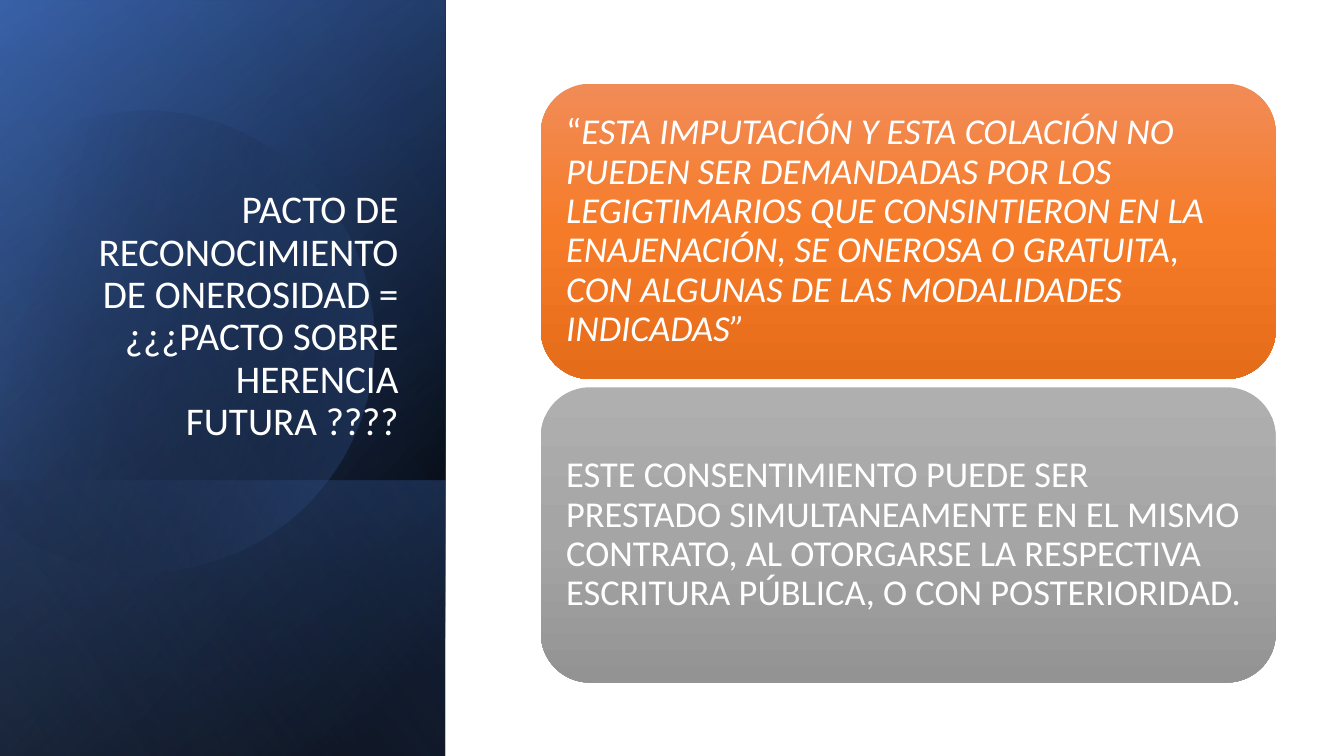
import math
import pptx
import pptx.util
import pptx.dml.color
import pptx.enum.shapes
import pptx.enum.text
import pptx.oxml
import pptx.oxml.ns

Cm = pptx.util.Cm
RGB = pptx.dml.color.RGBColor
KIND = pptx.enum.shapes.MSO_SHAPE
ALIGN = pptx.enum.text.PP_ALIGN
ANCHOR = pptx.enum.text.MSO_ANCHOR
SPACE = pptx.oxml.ns.nsdecls("a")

WHITE = RGB(0xFF, 0xFF, 0xFF)
BLACK = RGB(0x00, 0x00, 0x00)
NAVY = RGB(0x2F, 0x55, 0x97)
BLUE = RGB(0x44, 0x72, 0xC4)
PALE = RGB(0x8F, 0xAA, 0xDC)
ORANGE = [RGB(0xF1, 0x8C, 0x57), RGB(0xF6, 0x7B, 0x28), RGB(0xE5, 0x6C, 0x19)]
GRAY = [RGB(0xAF, 0xAF, 0xAF), RGB(0xA5, 0xA5, 0xA5), RGB(0x93, 0x93, 0x93)]


def paint(shape, stops, angle):
    """Fill with (position, colour, opacity) stops, all but the angle in percent."""
    marks = "".join(
        f'<a:gs pos="{pos * 1000}"><a:srgbClr val="{color}">'
        f'<a:alpha val="{alpha * 1000}"/></a:srgbClr></a:gs>'
        for pos, color, alpha in stops)
    fill = pptx.oxml.parse_xml(
        f'<a:gradFill {SPACE} rotWithShape="1"><a:gsLst>{marks}</a:gsLst>'
        f'<a:lin ang="{angle * 60000}" scaled="0"/></a:gradFill>')
    shape._element.spPr.insert(2, fill)
    shape.line.fill.background()
    shape.shadow.inherit = False


def write(shape, runs, size, align, anchor, side, edge):
    """Set the text from (words, italic) runs."""
    frame = shape.text_frame
    frame.word_wrap = True
    frame.auto_size = pptx.enum.text.MSO_AUTO_SIZE.NONE
    frame.vertical_anchor = anchor
    frame.margin_left = frame.margin_right = side
    frame.margin_top = frame.margin_bottom = edge
    para = frame.paragraphs[0]
    para.alignment = align
    para.line_spacing = 0.9
    for words, slant in runs:
        run = para.add_run()
        run.text = words
        run.font.name = "Calibri"
        run.font.size = pptx.util.Pt(size)
        run.font.italic = slant
        run.font.color.rgb = WHITE


deck = pptx.Presentation()
deck.slide_width, deck.slide_height = Cm(33.87), Cm(19.05)
slide = deck.slides.add_slide(deck.slide_layouts[5])
shapes = slide.shapes

# Side panel: turned rectangles, with the disc below the last one
full = (-3.92, 3.92, 19.05, 11.23)
foot = (2.13, 9.97, 6.96, 11.23)
panels = [
    (full, [(8, BLACK, 100), (100, NAVY, 100)], 50),
    (full, [(0, BLACK, 0), (99, BLUE, 46)], 30),
    (foot, [(2, BLUE, 29), (100, BLACK, 30)], 130),
    (full, [(0, BLACK, 0), (99, PALE, 11)], 120),
]
layers = []
for box, stops, angle in panels:
    panel = shapes.add_shape(KIND.RECTANGLE, *map(Cm, box))
    panel.rotation = 90
    panel._element.spPr.xfrm.set("flipH", "1")
    paint(panel, stops, angle)
    layers.append(panel)

# Disc cut off at the left: a tilted frame that holds a curved outline
LEFT, TOP, WIDE, HIGH = -1.4, 2.69, 10.85, 11.61
TILT = 16.1
outline = [
    ("moveTo", [(3.78, 2.79)]),
    ("cubicBezTo", [(6.25, 2.84), (8.51, 4.5), (9.22, 6.99)]),
    ("cubicBezTo", [(10.11, 10.08), (8.33, 13.28), (5.26, 14.17)]),
    ("cubicBezTo", [(3.33, 14.73), (1.35, 14.25), (-0.08, 13.06)]),
    ("lnTo", [(-0.38, 12.78)]),
    ("lnTo", [(-0.38, 4.45)]),
    ("lnTo", [(0, 4.09)]),
    ("cubicBezTo", [(0.58, 3.58), (1.27, 3.23), (2.03, 3.02)]),
    ("cubicBezTo", [(2.62, 2.87), (3.2, 2.79), (3.78, 2.79)]),
    ("close", []),
]
form = shapes.build_freeform(Cm(LEFT), Cm(TOP))
form.add_line_segments([(Cm(LEFT + WIDE), Cm(TOP)),
                        (Cm(LEFT + WIDE), Cm(TOP + HIGH)),
                        (Cm(LEFT), Cm(TOP + HIGH))])
disc = form.convert_to_shape()
track = disc._element.spPr.find(".//" + pptx.oxml.ns.qn("a:path"))
for part in list(track):
    track.remove(part)
cos, sin = math.cos(math.radians(TILT)), math.sin(math.radians(TILT))
for verb, points in outline:
    spots = ""
    for x, y in points:
        dx, dy = x - LEFT - WIDE / 2, y - TOP - HIGH / 2
        spots += (f'<a:pt x="{Cm(WIDE / 2 + dx * cos - dy * sin)}" '
                  f'y="{Cm(HIGH / 2 + dx * sin + dy * cos)}"/>')
    track.append(pptx.oxml.parse_xml(f"<a:{verb} {SPACE}>{spots}</a:{verb}>"))
disc.rotation = 360 - TILT
paint(disc, [(29, BLACK, 0), (100, BLUE, 43)], 30)
layers[-1]._element.addprevious(disc._element)

# Title, brought in front of the panel
title = shapes.title
title.left, title.top = Cm(1.63), Cm(4.67)
title.width, title.height = Cm(8.66), Cm(6.65)
write(title, [("PACTO DE RECONOCIMIENTO DE ONEROSIDAD = "
               "¿¿¿PACTO SOBRE HERENCIA FUTURA ????", False)],
      size=28, align=ALIGN.RIGHT, anchor=ANCHOR.BOTTOM,
      side=Cm(0.25), edge=Cm(0.13))
layers[-1]._element.addnext(title._element)

# Two cards, each with a text box on top
cards = [
    (ORANGE, [("“", False),
              ("ESTA IMPUTACIÓN Y ESTA COLACIÓN NO PUEDEN SER DEMANDADAS POR "
               "LOS LEGIGTIMARIOS QUE CONSINTIERON EN LA ENAJENACIÓN, SE "
               "ONEROSA O GRATUITA, CON ALGUNAS DE LAS MODALIDADES "
               "INDICADAS”", True)]),
    (GRAY, [("ESTE CONSENTIMIENTO PUEDE SER PRESTADO SIMULTANEAMENTE EN EL "
             "MISMO CONTRATO, AL OTORGARSE LA RESPECTIVA ESCRITURA PÚBLICA, "
             "O CON POSTERIORIDAD.", False)]),
]
for row, (shades, runs) in enumerate(cards):
    top = 2.11 + 7.65 * row
    card = shapes.add_shape(KIND.ROUNDED_RECTANGLE, Cm(13.63), Cm(top),
                            Cm(18.52), Cm(7.44))
    paint(card, [(50 * i, shade, 100) for i, shade in enumerate(shades)], 90)
    label = shapes.add_textbox(Cm(13.99), Cm(top + 0.37), Cm(17.8), Cm(6.7))
    write(label, runs, size=26, align=ALIGN.LEFT, anchor=ANCHOR.MIDDLE,
          side=Cm(0.28), edge=Cm(0.28))

deck.save("out.pptx")
